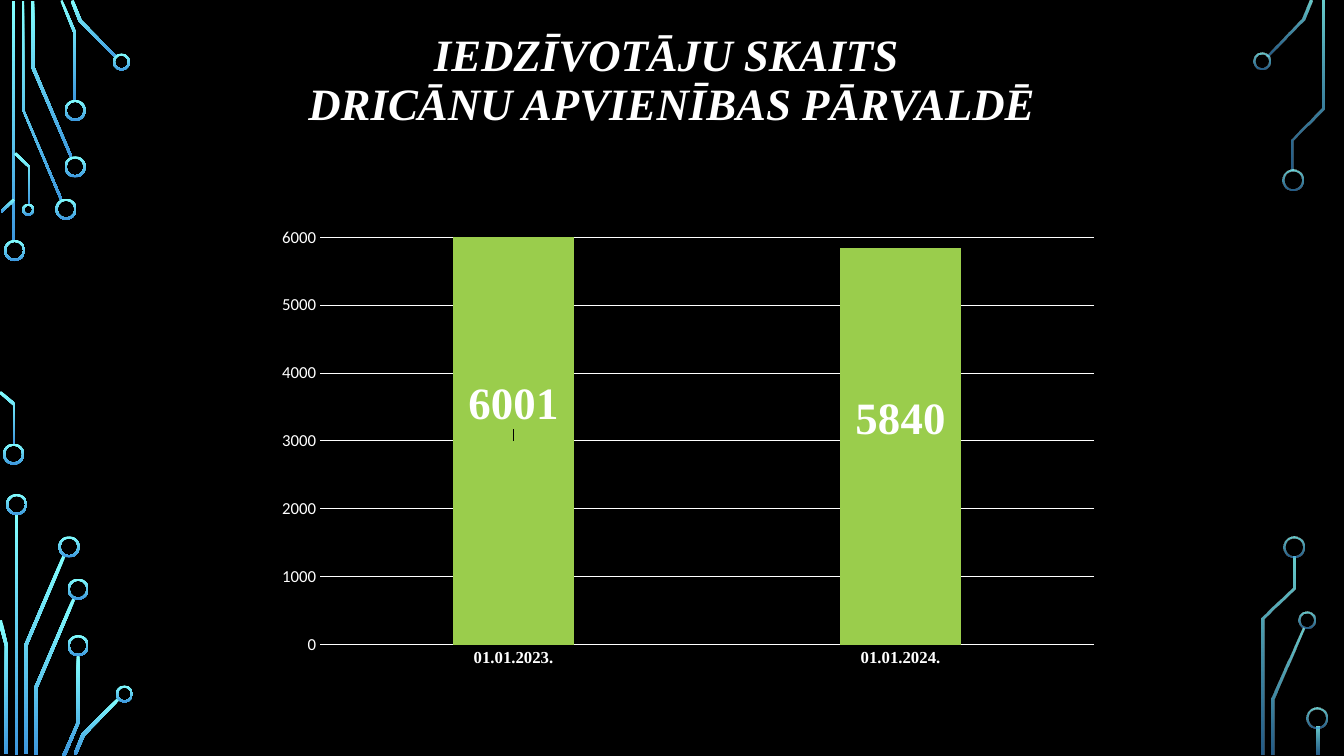
import pptx
import pptx.chart.data
import pptx.dml.color
import pptx.enum.chart
import pptx.enum.shapes
import pptx.enum.text
import pptx.oxml
import pptx.oxml.ns
import pptx.util
import lxml.etree

PX = 9144
SLIDE_WIDTH, SLIDE_HEIGHT = 1333, 750
RING_STROKE = 2
COLOURS = {
    "background": "000000",
    "text": "FFFFFF",
    "bar": "9ACD4C",
    "glow_top": "82FFFF",
    "glow_bottom": "3D97DE",
}
SERIF = "Times New Roman"
SANS = "Calibri"

UPPER_LEFT = {
    "bars": [(12, 1, 3, 239)],
    "rings": [(4, 238, 21), (3, 440, 21), (55, 197, 21), (64, 155, 21),
              (64, 99, 21), (112, 53, 17), (22, 202, 12)],
    "traces": [
        [(60, 199), (22, 109), (22, 1), (24, 1), (24, 109), (62, 198)],
        [(70, 157), (31, 67), (31, 1), (34, 1), (34, 66), (72, 156)],
        [(76, 100), (73, 100), (73, 33), (60, 1), (62, 0), (76, 33)],
        [(115, 58), (78, 21), (70, 1), (73, 0), (81, 20), (116, 56)],
        [(2, 211), (1, 209), (13, 197), (15, 199)],
        [(15, 441), (13, 441), (13, 402), (-1, 390), (1, 388), (15, 400)],
        [(30, 203), (28, 203), (28, 166), (14, 153), (16, 151), (30, 165)],
    ],
}
LOWER_LEFT = {
    "bars": [(15, 20, 3, 239)],
    "rings": [(6, 0, 21), (58, 42, 21), (67, 84, 21), (67, 140, 21), (115, 190, 17)],
    "traces": [
        [(27, 258), (24, 258), (24, 150), (62, 61), (65, 62), (27, 151)],
        [(8, 258), (5, 258), (5, 151), (-2, 126), (2, 125), (8, 151)],
        [(37, 259), (34, 259), (34, 192), (72, 103), (75, 104), (37, 193)],
        [(65, 260), (62, 259), (76, 227), (76, 160), (79, 160), (79, 227)],
        [(76, 259), (73, 258), (81, 238), (117, 202), (119, 204), (84, 240)],
    ],
}
UPPER_RIGHT = {
    "bars": [],
    "rings": [(3, 52, 17), (32, 168, 21)],
    "traces": [
        [(18, 56), (16, 55), (51, 19), (59, 0), (62, 1), (54, 20)],
        [(43, 169), (41, 169), (41, 138), (71, 107), (71, 1), (74, 1), (74, 108), (43, 139)],
    ],
}
LOWER_RIGHT = {
    "bars": [(66, 191, 3, 28)],
    "rings": [(48, 77, 17), (33, 2, 21), (56, 172, 21)],
    "traces": [
        [(24, 219), (21, 219), (21, 163), (52, 93), (54, 94), (24, 164)],
        [(14, 219), (11, 219), (11, 83), (42, 53), (42, 22), (45, 22), (45, 54), (14, 84)],
    ],
}


def colour(name):
    return pptx.dml.color.RGBColor.from_string(COLOURS[name])


def emu(*lengths):
    return [pptx.util.Emu(length * PX) for length in lengths]


def format_font(font, name, size, bold=False):
    font.name = name
    font.size = pptx.util.Pt(size)
    font.bold = bold
    font.color.rgb = colour("text")


def apply_glow(shape, opacities):
    shape.shadow.inherit = False
    shape.line.fill.background()
    shape.fill.gradient()
    shape.fill.gradient_angle = 270
    for stop, name in zip(shape.fill.gradient_stops, ("glow_top", "glow_bottom")):
        stop.color.rgb = colour(name)
    for element, opacity in zip(shape._element.xpath(".//a:gs/a:srgbClr"), opacities):
        alpha = lxml.etree.SubElement(element, pptx.oxml.ns.qn("a:alpha"))
        alpha.set("val", str(opacity * 1000))


def draw_circuit(slide, left, top, circuit, opacities=()):
    shapes = slide.shapes
    kinds = pptx.enum.shapes.MSO_SHAPE
    for x, y, width, height in circuit["bars"]:
        bar = shapes.add_shape(kinds.RECTANGLE, *emu(left + x, top + y, width, height))
        apply_glow(bar, opacities)
    for points in circuit["traces"]:
        outline = [(left + x, top + y) for x, y in points]
        builder = shapes.build_freeform(*outline[0], scale=PX)
        builder.add_line_segments(outline[1:], close=True)
        apply_glow(builder.convert_to_shape(), opacities)
    for x, y, diameter in circuit["rings"]:
        ring = shapes.add_shape(kinds.DONUT, *emu(left + x, top + y, diameter, diameter))
        ring.adjustments[0] = RING_STROKE / diameter
        apply_glow(ring, opacities)


def draw_title(slide, left, top, width, height):
    text_frame = slide.shapes.add_textbox(*emu(left, top, width, height)).text_frame
    text_frame.word_wrap = True
    text_frame.vertical_anchor = pptx.enum.text.MSO_ANCHOR.MIDDLE
    text_frame.text = "IEDZĪVOTĀJU SKAITS \vDRICĀNU APVIENĪBAS PĀRVALDĒ"
    paragraph = text_frame.paragraphs[0]
    paragraph.alignment = pptx.enum.text.PP_ALIGN.CENTER
    paragraph.line_spacing = 0.9
    for run in paragraph.runs:
        format_font(run.font, SERIF, 32, bold=True)
        run.font.italic = True


def manual_layout(**settings):
    items = "".join(f'<c:{name} val="{value}"/>' for name, value in settings.items())
    return pptx.oxml.parse_xml(
        f'<c:layout {pptx.oxml.ns.nsdecls("c")}><c:manualLayout>{items}</c:manualLayout></c:layout>')


def draw_population_chart(slide, left, top, width, height):
    chart_data = pptx.chart.data.CategoryChartData()
    chart_data.categories = ["01.01.2023.", "01.01.2024."]
    chart_data.add_series("Series 1", (6001, 5840))
    chart = slide.shapes.add_chart(
        pptx.enum.chart.XL_CHART_TYPE.COLUMN_CLUSTERED,
        *emu(left, top, width, height), chart_data).chart
    chart.has_legend = False
    chart.has_title = False
    format_font(chart.font, SANS, 10)

    no_tick = pptx.enum.chart.XL_TICK_MARK.NONE
    for axis, name, bold in ((chart.category_axis, SERIF, True), (chart.value_axis, SANS, False)):
        axis.major_tick_mark = no_tick
        axis.minor_tick_mark = no_tick
        format_font(axis.tick_labels.font, name, 12, bold)
    value_axis = chart.value_axis
    value_axis.minimum_scale = 0
    value_axis.maximum_scale = 6005
    value_axis.major_unit = 1000
    value_axis.format.line.fill.background()
    value_axis.has_major_gridlines = True
    for line in (chart.category_axis.format.line, value_axis.major_gridlines.format.line):
        line.color.rgb = colour("text")
        line.width = pptx.util.Pt(0.75)

    plot = chart.plots[0]
    plot.gap_width = 219
    plot.overlap = -27
    plot.vary_by_categories = False
    series = plot.series[0]
    series.invert_if_negative = False
    series.format.fill.solid()
    series.format.fill.fore_color.rgb = colour("bar")
    for index in range(2):
        label = series.points[index].data_label
        format_font(label.font, SERIF, 32, bold=True)
        label.position = pptx.enum.chart.XL_LABEL_POSITION.CENTER
    offsets = ((0, -0.08), (0, -0.06))
    for element, (x, y) in zip(chart._chartSpace.xpath(".//c:dLbl"), offsets):
        element.xpath("c:idx")[0].addnext(manual_layout(x=x, y=y))

    plot_area = chart._chartSpace.xpath(".//c:plotArea")[0]
    for layout in plot_area.xpath("c:layout"):
        plot_area.remove(layout)
    plot_area.insert(0, manual_layout(
        layoutTarget="inner", xMode="edge", yMode="edge", x=0.065, y=0.04, w=0.915, h=0.893))


def main():
    presentation = pptx.Presentation()
    presentation.slide_width, presentation.slide_height = emu(SLIDE_WIDTH, SLIDE_HEIGHT)
    slide = presentation.slides.add_slide(presentation.slide_layouts[6])
    slide.background.fill.solid()
    slide.background.fill.fore_color.rgb = colour("background")
    draw_circuit(slide, 0, 0, UPPER_LEFT)
    draw_circuit(slide, 0, 490, LOWER_LEFT)
    draw_circuit(slide, 1240, 0, UPPER_RIGHT, (80, 60))
    draw_circuit(slide, 1240, 530, LOWER_RIGHT, (80, 60))
    draw_title(slide, 125, 27, 1083, 108)
    draw_population_chart(slide, 263, 217, 839, 453)
    presentation.save("out.pptx")


if __name__ == "__main__":
    main()
